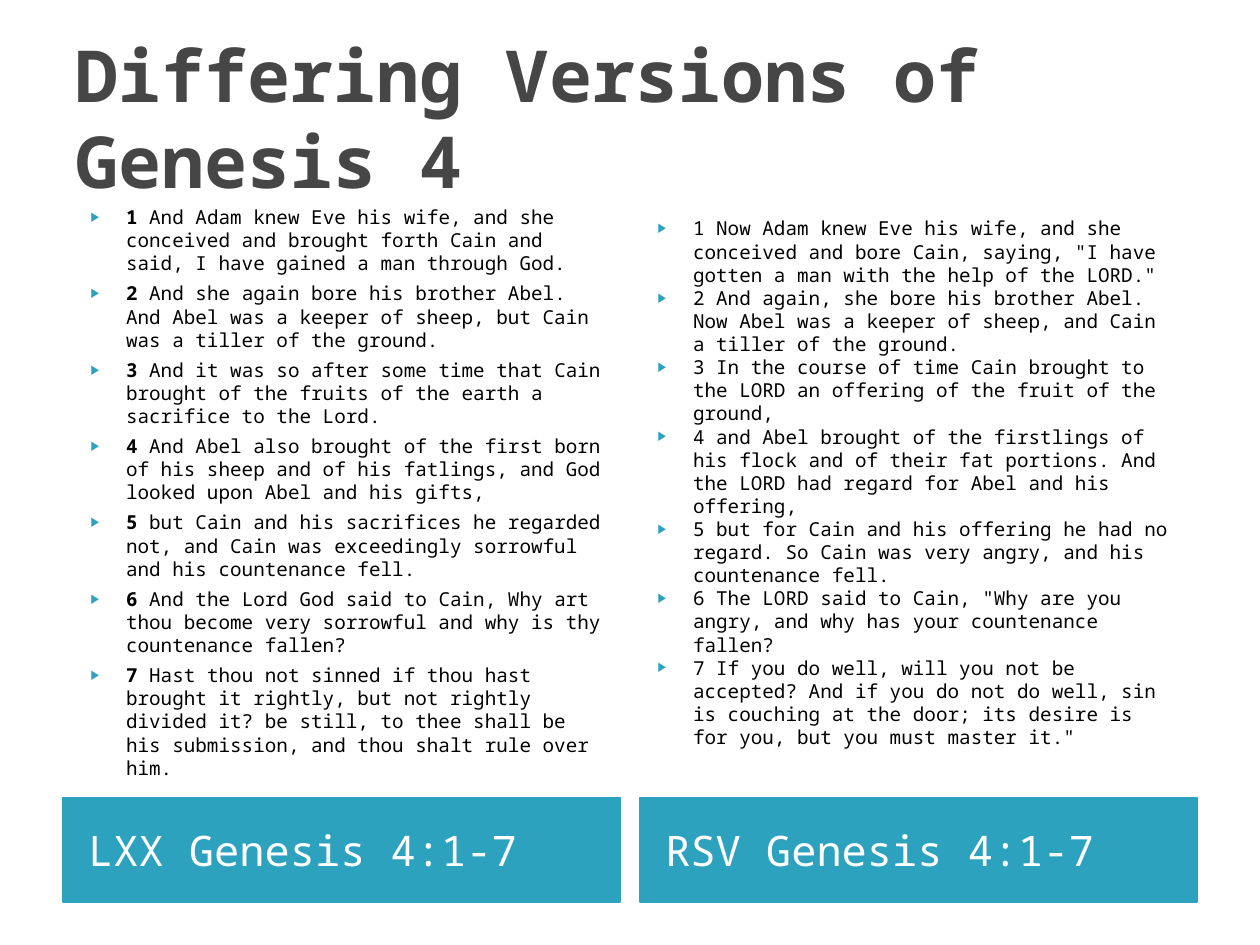
from lxml.etree import SubElement as Sub
from pptx import Presentation
from pptx.dml.color import RGBColor
from pptx.enum.text import MSO_ANCHOR as Anchor, MSO_AUTO_SIZE as Fit, PP_ALIGN as Align
from pptx.oxml.ns import qn
from pptx.util import Inches, Pt

TEAL = RGBColor(0x2D, 0xA2, 0xBF)
GRAY = RGBColor(0x46, 0x46, 0x46)
BLACK = RGBColor(0, 0, 0)
WHITE = RGBColor(255, 255, 255)

LXX = [
    "And Adam knew Eve his wife, and she conceived and brought forth Cain and said, I have gained a man through God.",
    "And she again bore his brother Abel. And Abel was a keeper of sheep, but Cain was a tiller of the ground.",
    "And it was so after some time that Cain brought of the fruits of the earth a sacrifice to the Lord.",
    "And Abel also brought of the first born of his sheep and of his fatlings, and God looked upon Abel and his gifts,",
    "but Cain and his sacrifices he regarded not, and Cain was exceedingly sorrowful and his countenance fell.",
    "And the Lord God said to Cain, Why art thou become very sorrowful and why is thy countenance fallen?",
    "Hast thou not sinned if thou hast brought it rightly, but not rightly divided it? be still, to thee shall be his submission, and thou shalt rule over him.",
]
RSV = [
    'Now Adam knew Eve his wife, and she conceived and bore Cain, saying, "I have gotten a man with the help of the LORD."',
    "And again, she bore his brother Abel. Now Abel was a keeper of sheep, and Cain a tiller of the ground.",
    "In the course of time Cain brought to the LORD an offering of the fruit of the ground,",
    "and Abel brought of the firstlings of his flock and of their fat portions. And the LORD had regard for Abel and his offering,",
    "but for Cain and his offering he had no regard. So Cain was very angry, and his countenance fell.",
    'The LORD said to Cain, "Why are you angry, and why has your countenance fallen?',
    'If you do well, will you not be accepted? And if you do not do well, sin is couching at the door; its desire is for you, but you must master it."',
]


class Deck:
    face = "Noto Sans Mono"
    edge, wide, gap = 0.5, 4.42, 0.16

    def __init__(self):
        self.prs = Presentation()
        self.prs.slide_width, self.prs.slide_height = Inches(10), Inches(7.5)
        self.slide = self.prs.slides.add_slide(self.prs.slide_layouts[4])

    def col(self, num):
        return self.edge + num * (self.wide + self.gap)

    def place(self, idx, left, top, width, height, anchor):
        box = self.slide.placeholders[idx]
        box.left, box.top = Inches(left), Inches(top)
        box.width, box.height = Inches(width), Inches(height)
        frame = box.text_frame
        frame.word_wrap, frame.auto_size = True, Fit.NONE
        frame.vertical_anchor = anchor
        return box

    def style(self, para, size, color, bold=False):
        para.alignment = Align.LEFT
        font = para.font
        font.name, font.size, font.bold = self.face, Pt(size), bold
        font.color.rgb = color

    def title(self, text):
        full = 2 * self.wide + self.gap
        box = self.place(0, self.edge, 0.3, full, 1.25, Anchor.MIDDLE)
        box.text_frame.text = text
        self.style(box.text_frame.paragraphs[0], 41, GRAY, True)

    def label(self, idx, num, text):
        box = self.place(idx, self.col(num), 6.33, self.wide, 0.83, Anchor.MIDDLE)
        box.fill.solid()
        box.fill.fore_color.rgb = box.line.color.rgb = TEAL
        box.line.width = Pt(0.75)
        frame = box.text_frame
        frame.margin_left = Inches(0.2)
        frame.text = text
        para = frame.paragraphs[0]
        para.space_before = Pt(0)
        self.style(para, 24, WHITE)

    def bullet(self, para):
        props = para._p.get_or_add_pPr()
        props.set("marL", str(Inches(0.4)))
        props.set("indent", str(Inches(-0.28)))
        Sub(Sub(props, qn("a:buClr")), qn("a:srgbClr"), val=str(TEAL))
        Sub(props, qn("a:buSzPct"), val="68000")
        Sub(props, qn("a:buChar"), char="▶")

    def verses(self, idx, left, top, lines, space=0, bold=False):
        box = self.place(idx, left, top, self.wide, 4.31, Anchor.TOP)
        frame = box.text_frame
        for num, line in enumerate(lines, 1):
            para = frame.paragraphs[0] if num == 1 else frame.add_paragraph()
            self.bullet(para)
            para.space_before = Pt(space if num > 1 else 0)
            self.style(para, 11, BLACK)
            if bold:
                mark = para.add_run()
                mark.text, mark.font.bold = str(num), True
                para.add_run().text = f" {line}"
            else:
                para.add_run().text = f"{num} {line}"


def main():
    deck = Deck()
    deck.title("Differing Versions of Genesis 4")
    # Version names along the foot
    deck.label(1, 0, "LXX Genesis 4:1-7")
    deck.label(3, 1, "RSV Genesis 4:1-7")
    # Verses side by side
    deck.verses(2, deck.col(0), 1.58, LXX, space=4, bold=True)
    deck.verses(4, 5, 1.67, RSV)
    deck.prs.save("out.pptx")


if __name__ == "__main__":
    main()
